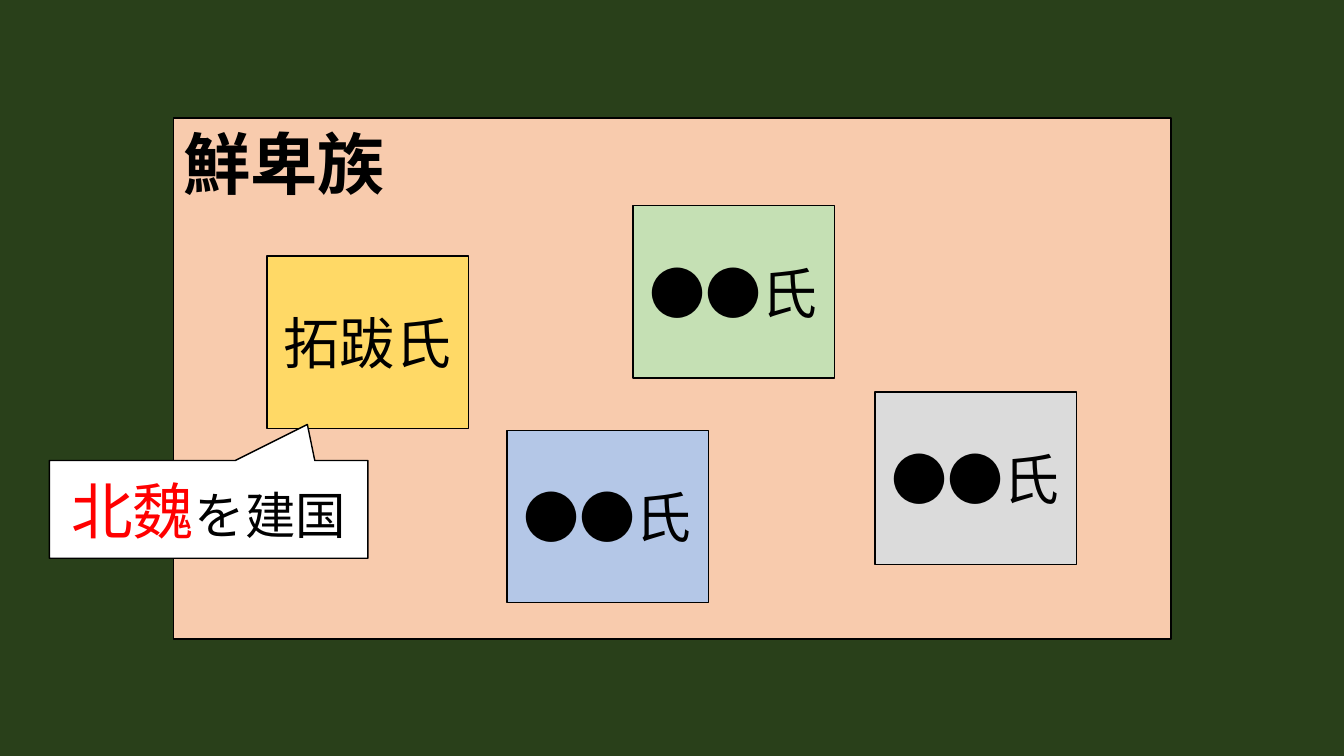
from pptx import Presentation
from pptx.dml.color import RGBColor
from pptx.enum import shapes, text
from pptx.util import Pt

BLACK = RGBColor(0x00, 0x00, 0x00)
WHITE = RGBColor(0xFF, 0xFF, 0xFF)
RED = RGBColor(0xFF, 0x00, 0x00)
DARK_GREEN = RGBColor(0x29, 0x40, 0x1A)
PEACH = RGBColor(0xF8, 0xCB, 0xAD)
YELLOW = RGBColor(0xFF, 0xD9, 0x66)
BLUE = RGBColor(0xB4, 0xC7, 0xE7)
GREEN = RGBColor(0xC5, 0xE0, 0xB4)
GREY = RGBColor(0xDB, 0xDB, 0xDB)

FONT = "Calibri"
CLAN_WIDTH, CLAN_HEIGHT = 144, 123.1
CLANS = [
    ("拓跋氏", YELLOW, 67, 98.6),
    ("●●氏", BLUE, 238.3, 223.2),
    ("●●氏", GREEN, 328.3, 62.6),
    ("●●氏", GREY, 501.1, 195.8),
]


def add_span(para, content, size, color=BLACK, bold=False):
    span = para.add_run()
    span.text = content
    span.font.name = FONT
    span.font.size = Pt(size)
    span.font.bold = bold
    span.font.color.rgb = color


def add_box(page, box, fill, kind=shapes.MSO_SHAPE.RECTANGLE,
            align=text.PP_ALIGN.CENTER, anchor=text.MSO_ANCHOR.MIDDLE):
    shape = page.shapes.add_shape(kind, *(Pt(length) for length in box))
    shape.shadow.inherit = False
    shape.fill.solid()
    shape.fill.fore_color.rgb = fill
    shape.line.color.rgb = BLACK
    shape.line.width = Pt(1)
    frame = shape.text_frame
    frame.word_wrap = True
    frame.vertical_anchor = anchor
    para = frame.paragraphs[0]
    para.alignment = align
    return shape, para


def add_tribe(page, box):
    _, para = add_box(page, box, PEACH, align=text.PP_ALIGN.LEFT,
                      anchor=text.MSO_ANCHOR.TOP)
    add_span(para, "鮮卑族", 48, bold=True)
    left, top = box[:2]
    for name, fill, across, down in CLANS:
        clan_box = (left + across, top + down, CLAN_WIDTH, CLAN_HEIGHT)
        _, para = add_box(page, clan_box, fill)
        add_span(para, name, 40)


def add_callout(page, box):
    callout, para = add_box(page, box, WHITE,
                            kind=shapes.MSO_SHAPE.RECTANGULAR_CALLOUT)
    callout.adjustments[0] = 0.31
    callout.adjustments[1] = -0.87
    add_span(para, "北魏", 44, color=RED)
    add_span(para, "を建国", 36)


def main():
    deck = Presentation()
    deck.slide_width, deck.slide_height = Pt(960), Pt(540)
    page = deck.slides.add_slide(deck.slide_layouts[6])
    page.background.fill.solid()
    page.background.fill.fore_color.rgb = DARK_GREEN
    add_tribe(page, (123.8, 84.2, 712.8, 372.2))
    add_callout(page, (35.3, 329, 227.5, 69.8))
    deck.save("out.pptx")


if __name__ == "__main__":
    main()
